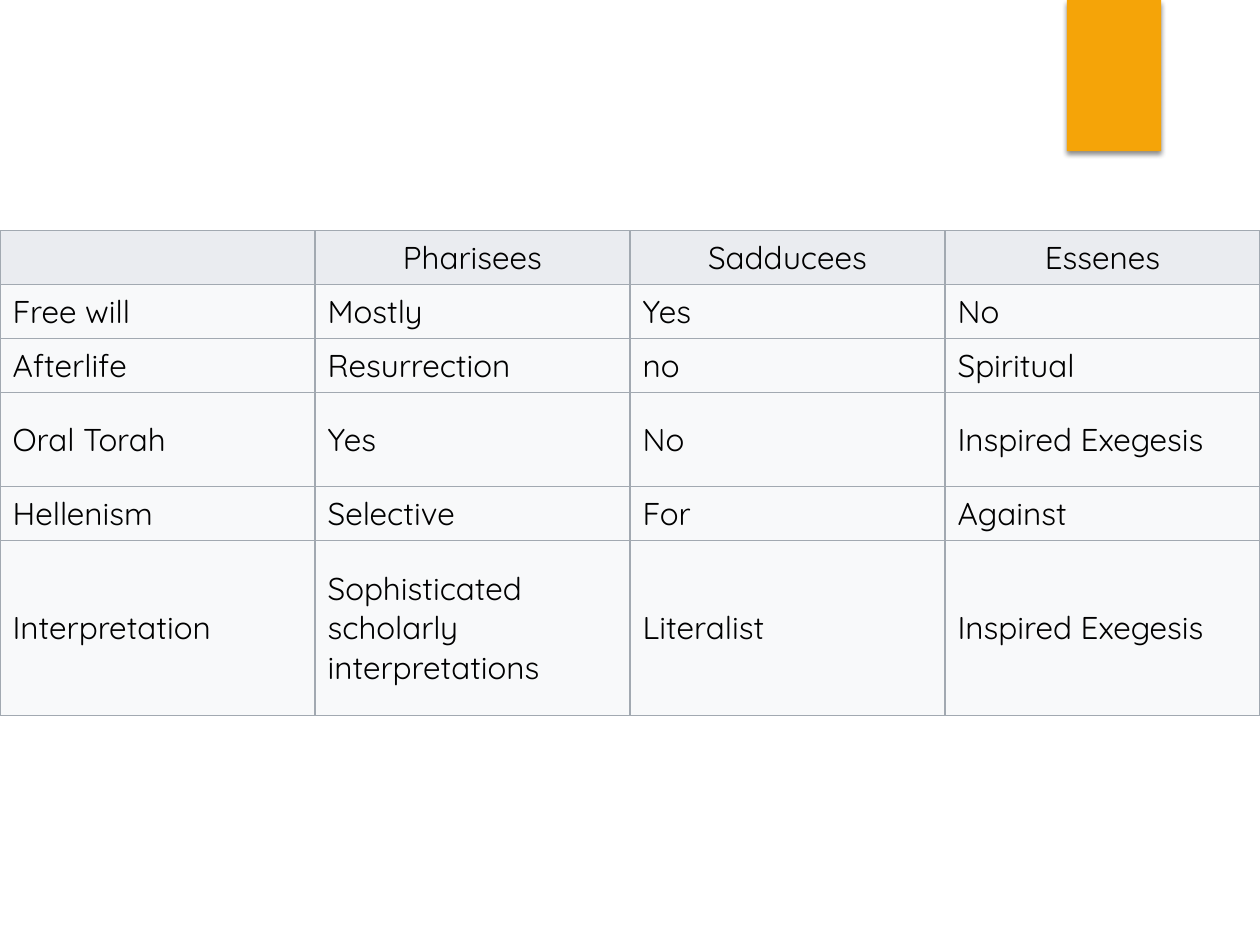
import pptx
import pptx.dml.color
import pptx.enum.shapes
import pptx.enum.text
import pptx.oxml
import pptx.oxml.ns
import pptx.util

Cm = pptx.util.Cm
Pt = pptx.util.Pt
ALIGN = pptx.enum.text.PP_ALIGN

COLORS = {
    "accent": "F5A408",
    "header": "EAECF0",
    "body": "F8F9FA",
    "border": "A2A9B1",
    "text": "000000",
    "shadow": "000000",
}
FONT = "Quicksand"

BELIEFS = [
    ["", "Pharisees", "Sadducees", "Essenes"],
    ["Free will", "Mostly", "Yes", "No"],
    ["Afterlife", "Resurrection", "no", "Spiritual"],
    ["Oral Torah", "Yes", "No", "Inspired Exegesis"],
    ["Hellenism", "Selective", "For", "Against"],
    ["Interpretation", "Sophisticated scholarly interpretations",
     "Literalist", "Inspired Exegesis"],
]
ROW_HEIGHTS = [1.09, 1.09, 1.09, 1.9, 1.09, 3.53]


def rgb(name):
    return pptx.dml.color.RGBColor.from_string(COLORS[name])


def write_text(frame, text, size=18, color="text", bold=False, align=ALIGN.LEFT):
    paragraph = frame.paragraphs[0]
    paragraph.alignment = align
    if not text:
        return
    run = paragraph.add_run()
    run.text = text
    run.font.name = FONT
    run.font.size = Pt(size)
    run.font.bold = bold
    run.font.color.rgb = rgb(color)


def add_borders(cell, color="border", width=0.75):
    properties = cell._tc.get_or_add_tcPr()
    # Border lines must come before the cell's fill
    for position, side in enumerate(("lnL", "lnR", "lnT", "lnB")):
        line = pptx.oxml.parse_xml(
            f'<a:{side} {pptx.oxml.ns.nsdecls("a")} w="{Pt(width)}">'
            f'<a:solidFill><a:srgbClr val="{COLORS[color]}"/></a:solidFill>'
            f'</a:{side}>')
        properties.insert(position, line)


def add_accent_tab(slide, left, top, width, height):
    tab = slide.shapes.add_shape(
        pptx.enum.shapes.MSO_SHAPE.RECTANGLE,
        Cm(left), Cm(top), Cm(width), Cm(height))
    tab.fill.solid()
    tab.fill.fore_color.rgb = rgb("accent")
    tab.line.fill.background()

    # Soft shadow straight below the tab
    tab.shadow.inherit = False
    effects = tab._element.spPr.find(pptx.oxml.ns.qn("a:effectLst"))
    effects.append(pptx.oxml.parse_xml(
        f'<a:outerShdw {pptx.oxml.ns.nsdecls("a")} blurRad="{Pt(3)}" '
        f'dist="{Pt(2)}" dir="5400000" algn="ctr" rotWithShape="0">'
        f'<a:srgbClr val="{COLORS["shadow"]}"><a:alpha val="45000"/></a:srgbClr>'
        f'</a:outerShdw>'))


def add_beliefs_table(slide, left, top, width, height):
    beliefs = slide.shapes.add_table(
        len(BELIEFS), len(BELIEFS[0]),
        Cm(left), Cm(top), Cm(width), Cm(height)).table
    beliefs.horz_banding = False
    for column in beliefs.columns:
        column.width = Cm(width / len(BELIEFS[0]))
    scale = height / sum(ROW_HEIGHTS)
    for row, row_height in zip(beliefs.rows, ROW_HEIGHTS):
        row.height = Cm(row_height * scale)

    for r, entries in enumerate(BELIEFS):
        is_header = r == 0
        for c, entry in enumerate(entries):
            cell = beliefs.cell(r, c)
            cell.vertical_anchor = pptx.enum.text.MSO_ANCHOR.MIDDLE
            cell.fill.solid()
            cell.fill.fore_color.rgb = rgb("header" if is_header else "body")
            add_borders(cell)
            write_text(cell.text_frame, entry,
                       align=ALIGN.CENTER if is_header else ALIGN.LEFT)


def main():
    deck = pptx.Presentation()
    deck.slide_width, deck.slide_height = Cm(25.4), Cm(19.05)
    slide = deck.slides.add_slide(deck.slide_layouts[6])
    add_accent_tab(slide, left=21.51, top=0, width=1.9, height=3.05)
    add_beliefs_table(slide, left=0, top=4.65, width=25.4, height=9.78)
    deck.save("out.pptx")


if __name__ == "__main__":
    main()
